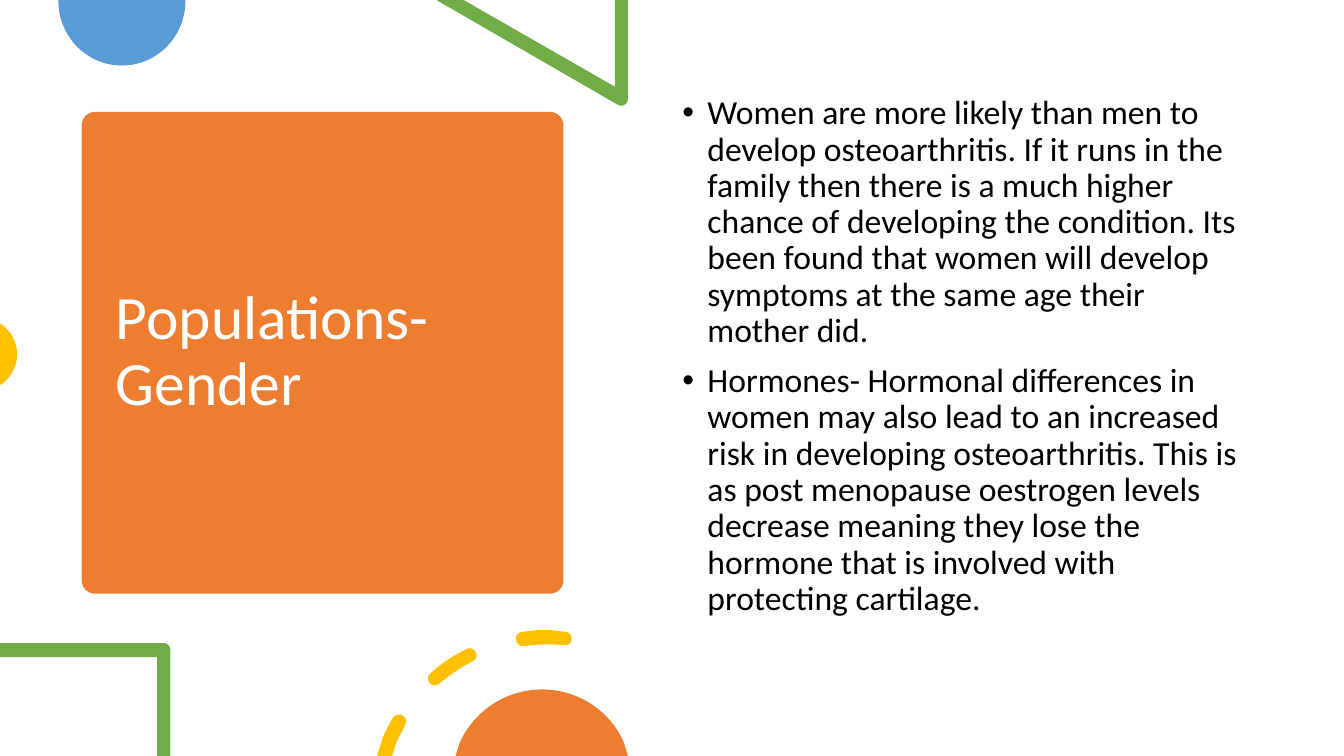
from lxml import etree
from pptx import Presentation
from pptx.dml.color import RGBColor
from pptx.enum.shapes import MSO_SHAPE
from pptx.enum.text import MSO_ANCHOR
from pptx.oxml.ns import qn
from pptx.util import Inches, Pt

ROUNDED = MSO_SHAPE.ROUNDED_RECTANGLE
MIDDLE = MSO_ANCHOR.MIDDLE
ORANGE, BLUE, GREEN, YELLOW = "ED7D31", "5B9BD5", "70AD47", "FFC000"
WHITE, BLACK = "FFFFFF", "000000"

presentation = Presentation()
presentation.slide_width = Inches(7.5 * 16 / 9)
presentation.slide_height = Inches(7.5)
slide = presentation.slides.add_slide(presentation.slide_layouts[6])


def paint(fill, color):
    fill.solid()
    fill.fore_color.rgb = RGBColor.from_string(color)


def add_outline(color, *contours):
    """Draw closed contours: a pair is a corner, six numbers are a Bezier curve."""
    builder = slide.shapes.build_freeform(*map(Inches, contours[0][0]), scale=1.0)
    segments = []
    for index, (start, *steps) in enumerate(contours):
        if index:
            builder.move_to(*map(Inches, start))
        builder.add_line_segments([tuple(map(Inches, step[-2:])) for step in steps], close=True)
        segments += steps
    outline = builder.convert_to_shape()
    for line, segment in zip(list(outline._element.iter(qn("a:lnTo"))), segments):
        if len(segment) == 6:
            curve = etree.Element(qn("a:cubicBezTo"))
            for x, y in zip(segment[::2], segment[1::2]):
                point = etree.SubElement(curve, qn("a:pt"))
                point.set("x", str(Inches(x) - outline.left))
                point.set("y", str(Inches(y) - outline.top))
            line.getparent().replace(line, curve)
    outline.shadow.inherit = False
    outline.line.fill.background()
    paint(outline.fill, color)


# Title card
card = slide.shapes.add_shape(ROUNDED, Inches(0.81), Inches(1.11), Inches(4.78), Inches(4.78))
card.adjustments[0] = 0.028
card.shadow.inherit = False
card.line.fill.background()
paint(card.fill, ORANGE)

title = slide.shapes.add_textbox(Inches(1.05), Inches(1.22), Inches(4.31), Inches(4.56))
title.text_frame.text = "Populations- Gender"
title.text_frame.vertical_anchor = MIDDLE

# Decorations at the top and left edges
add_outline(BLUE, [(1.84, 0), (0.58, 0), (0.58, 0.01),
                   (0.58, 0.36, 0.86, 0.65, 1.21, 0.65),
                   (1.56, 0.65, 1.84, 0.36, 1.84, 0.01)])
add_outline(GREEN, [(6.23, 0), (6.1, 0), (6.1, 0.86), (4.6, 0), (4.33, 0), (6.13, 1.04),
                    (6.14, 1.05, 6.15, 1.05, 6.16, 1.05),
                    (6.2, 1.05, 6.23, 1.02, 6.23, 0.98)])
add_outline(YELLOW, [(0, 3.21), (0, 3.82), (0.02, 3.81),
                     (0.11, 3.74, 0.17, 3.64, 0.17, 3.51),
                     (0.17, 3.39, 0.11, 3.29, 0.02, 3.22)])

# Bullets
findings = slide.shapes.add_textbox(Inches(6.67), Inches(0.9), Inches(5.75), Inches(5.35))
findings.text_frame.text = "\n".join([
    "Women are more likely than men to develop osteoarthritis. If it runs in the family then "
    "there is a much higher chance of developing the condition. Its been found that women will "
    "develop symptoms at the same age their mother did.",
    "Hormones- Hormonal differences in women may also lead to an increased risk in developing "
    "osteoarthritis. This is as post menopause oestrogen levels decrease meaning they lose the "
    "hormone that is involved with protecting cartilage.",
])
for paragraph in findings.text_frame.paragraphs:
    paragraph.space_before = Pt(10)
    properties = paragraph._p.get_or_add_pPr()
    properties.set("marL", str(Inches(0.25)))
    properties.set("indent", str(Inches(-0.25)))
    etree.SubElement(properties, qn("a:buFont")).set("typeface", "Arial")
    etree.SubElement(properties, qn("a:buChar")).set("char", "•")

for box, size, color in [(title, 44, WHITE), (findings, 24, BLACK)]:
    box.text_frame.word_wrap = True
    for paragraph in box.text_frame.paragraphs:
        paragraph.line_spacing = 0.9
        font = paragraph.runs[0].font
        font.name = "Calibri"
        font.size = Pt(size)
        paint(font.fill, color)

# Decorations at the bottom edge
add_outline(GREEN, [(1.63, 6.38), (0, 6.38), (0, 6.52), (1.56, 6.52), (1.56, 7.5),
                    (1.69, 7.5), (1.69, 6.45), (1.69, 6.41, 1.66, 6.38, 1.63, 6.38)])
add_outline(
    YELLOW,
    [(3.97, 7.09), (3.94, 7.08, 3.92, 7.1, 3.9, 7.12), (3.86, 7.18, 3.83, 7.25, 3.8, 7.31),
     (3.74, 7.5), (3.89, 7.5), (3.93, 7.37), (3.96, 7.31, 3.99, 7.25, 4.02, 7.19),
     (4.04, 7.16, 4.03, 7.11, 3.99, 7.1), (3.99, 7.09, 3.98, 7.09, 3.97, 7.09)],
    [(4.65, 6.43), (4.65, 6.43, 4.64, 6.43, 4.63, 6.44), (4.5, 6.5, 4.38, 6.58, 4.27, 6.68),
     (4.24, 6.7, 4.24, 6.75, 4.26, 6.77), (4.27, 6.79, 4.29, 6.8, 4.31, 6.8),
     (4.33, 6.8, 4.35, 6.79, 4.36, 6.78), (4.46, 6.7, 4.57, 6.62, 4.69, 6.56),
     (4.73, 6.54, 4.74, 6.5, 4.72, 6.47), (4.71, 6.44, 4.68, 6.43, 4.65, 6.43)],
    [(5.4, 6.25), (5.32, 6.25, 5.25, 6.26, 5.18, 6.27), (5.14, 6.27, 5.11, 6.31, 5.12, 6.35),
     (5.12, 6.38, 5.15, 6.41, 5.19, 6.41), (5.19, 6.41, 5.19, 6.41, 5.2, 6.41),
     (5.33, 6.39, 5.46, 6.39, 5.6, 6.4), (5.63, 6.41, 5.67, 6.38, 5.67, 6.35),
     (5.68, 6.31, 5.65, 6.27, 5.62, 6.27), (5.62, 6.27, 5.61, 6.27, 5.61, 6.27),
     (5.54, 6.26, 5.47, 6.25, 5.4, 6.25)],
)
add_outline(ORANGE, [(5.38, 6.84), (5.01, 6.84, 4.7, 7.06, 4.56, 7.37), (4.52, 7.5),
                     (6.23, 7.5), (6.19, 7.37), (6.06, 7.06, 5.74, 6.84, 5.38, 6.84)])

presentation.save("out.pptx")
